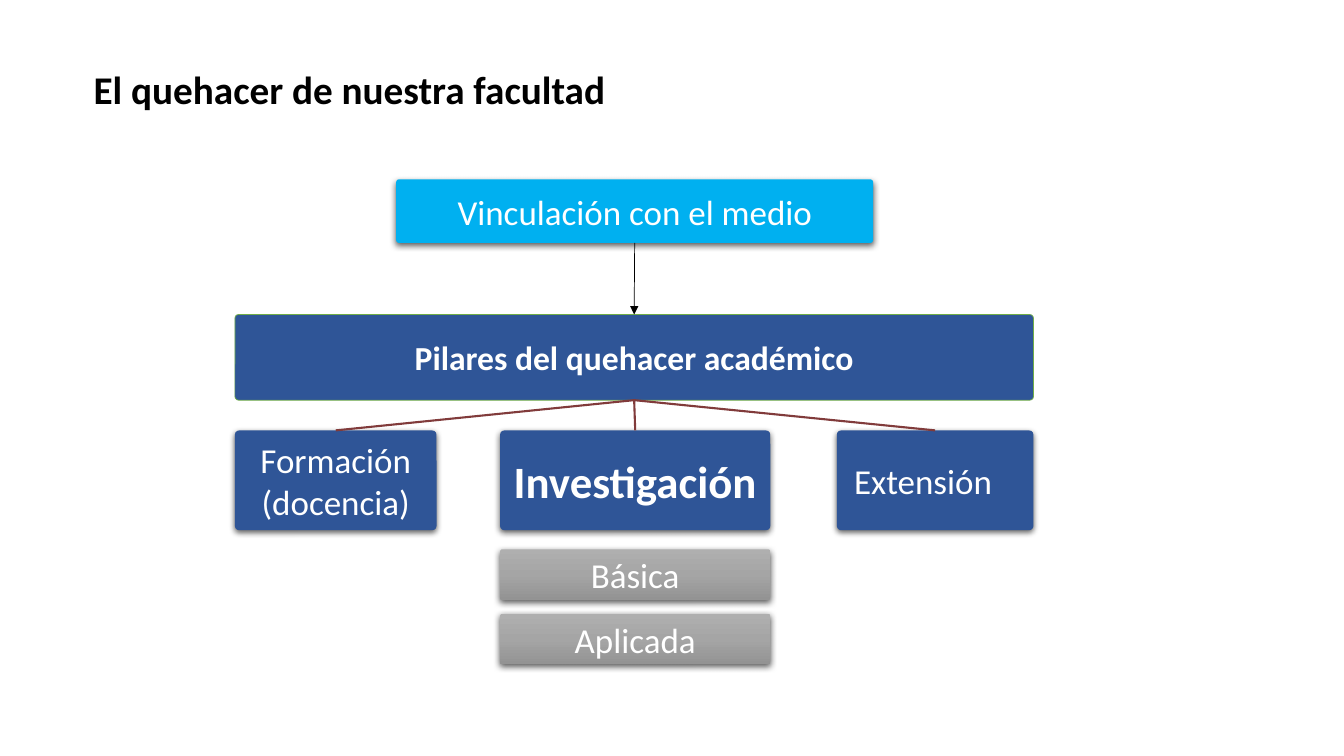
from copy import deepcopy

from lxml.etree import SubElement
from pptx import Presentation
from pptx.dml.color import RGBColor
from pptx.enum.shapes import MSO_CONNECTOR, MSO_SHAPE
from pptx.enum.text import MSO_ANCHOR, PP_ALIGN
from pptx.oxml.ns import qn
from pptx.util import Inches, Pt

COLORS = {
    "black": "000000", "white": "FFFFFF", "cyan": "00B0F0", "blue": "2F5597",
    "green": "70AD47", "maroon": "813B3B",
    "gray_top": "AFAFAF", "gray_middle": "A5A5A5", "gray_bottom": "939393",
}
FONT = "Calibri"
TOP, BOTTOM = 0, 2

# Columns: left edge and width; rows: top edge and height, in inches
COLUMNS = {"wide": (2.33, 7.92), "header": (3.93, 4.73),
           "left": (2.33, 2), "middle": (4.96, 2.68), "right": (8.3, 1.95)}
ROWS = {"header": (1.78, 0.63), "pillars": (3.12, 0.85), "areas": (4.27, 0.99),
        "basic": (5.45, 0.5), "applied": (6.09, 0.5)}

# Text, column, row, fill, size, bold
BOXES = [
    ("Vinculación con el medio", "header", "header", "cyan", 25, False),
    ("Pilares del quehacer académico", "wide", "pillars", "blue", 24, True),
    ("Formación\n(docencia)", "left", "areas", "blue", 25, False),
    ("Investigación", "middle", "areas", "blue", 32, True),
    ("Extensión", "right", "areas", "blue", 25, False),
    ("Básica", "middle", "basic", "gray", 25, False),
    ("Aplicada", "middle", "applied", "gray", 25, False),
]


def rgb(name):
    return RGBColor.from_string(COLORS[name])


def join(start, end, color, width):
    """Draw a line from the bottom of one box to the top of another."""
    line = page.shapes.add_connector(MSO_CONNECTOR.STRAIGHT, 0, 0, 0, 0)
    line.begin_connect(start, BOTTOM)
    line.end_connect(end, TOP)
    line.line.color.rgb = rgb(color)
    line.line.width = Pt(width)
    SubElement(line._element.spPr, qn("a:effectLst"))
    return line


deck = Presentation()
deck.slide_width, deck.slide_height = Inches(13.33), Inches(7.5)
page = deck.slides.add_slide(deck.slide_layouts[6])

title = page.shapes.add_textbox(Inches(0.83), Inches(0.6), Inches(11.55), Inches(2.12))
title.text_frame.word_wrap = True
heading = title.text_frame.paragraphs[0]
heading.text = "El quehacer de nuestra facultad"
heading.font.name, heading.font.size, heading.font.bold = FONT, Pt(28), True
heading.font.color.rgb = rgb("black")

boxes = {}
for text, column, row, fill, size, bold in BOXES:
    left, width = COLUMNS[column]
    top, height = ROWS[row]
    box = page.shapes.add_shape(MSO_SHAPE.ROUNDED_RECTANGLE, Inches(left), Inches(top),
                                Inches(width), Inches(height))
    boxes[text] = box
    box.adjustments[0] = 0.043

    if fill == "gray":
        box.fill.gradient()
        box.fill.gradient_angle = 270
        first, last = box.fill.gradient_stops
        first.color.rgb, first.position = rgb("gray_middle"), 0.5
        middle = deepcopy(first._gs)
        first.color.rgb, first.position = rgb("gray_top"), 0
        last.color.rgb, last.position = rgb("gray_bottom"), 1
        first._gs.addnext(middle)
    else:
        box.fill.solid()
        box.fill.fore_color.rgb = rgb(fill)

    box.shadow.inherit = False
    if row == "pillars":
        box.line.color.rgb = rgb("green")
        box.line.width = Pt(0.5)
    else:
        box.line.fill.background()
        effects = box._element.spPr.find(qn("a:effectLst"))
        shadow = SubElement(effects, qn("a:outerShdw"), blurRad=str(Pt(4.5)),
                            dist=str(Pt(1.5)), dir="5400000", rotWithShape="0")
        tint = SubElement(shadow, qn("a:srgbClr"), val=COLORS["black"])
        SubElement(tint, qn("a:alpha"), val="63000")

    frame = box.text_frame
    frame.word_wrap = True
    frame.vertical_anchor = MSO_ANCHOR.MIDDLE
    frame.margin_left = frame.margin_right = Inches(0.05)
    frame.margin_top = frame.margin_bottom = 0
    frame.text = text
    for para in frame.paragraphs:
        para.alignment = PP_ALIGN.CENTER
        para.font.name, para.font.size, para.font.bold = FONT, Pt(size), bold
        para.font.color.rgb = rgb("white")

boxes["Extensión"].text_frame.margin_right = Inches(0.29)

pillars = boxes["Pilares del quehacer académico"]
for area in ("Formación\n(docencia)", "Investigación", "Extensión"):
    join(pillars, boxes[area], "maroon", 1.5)

arrow = join(boxes["Vinculación con el medio"], pillars, "black", 0.5)
SubElement(arrow.line._get_or_add_ln(), qn("a:tailEnd"), type="triangle")

deck.save("out.pptx")
